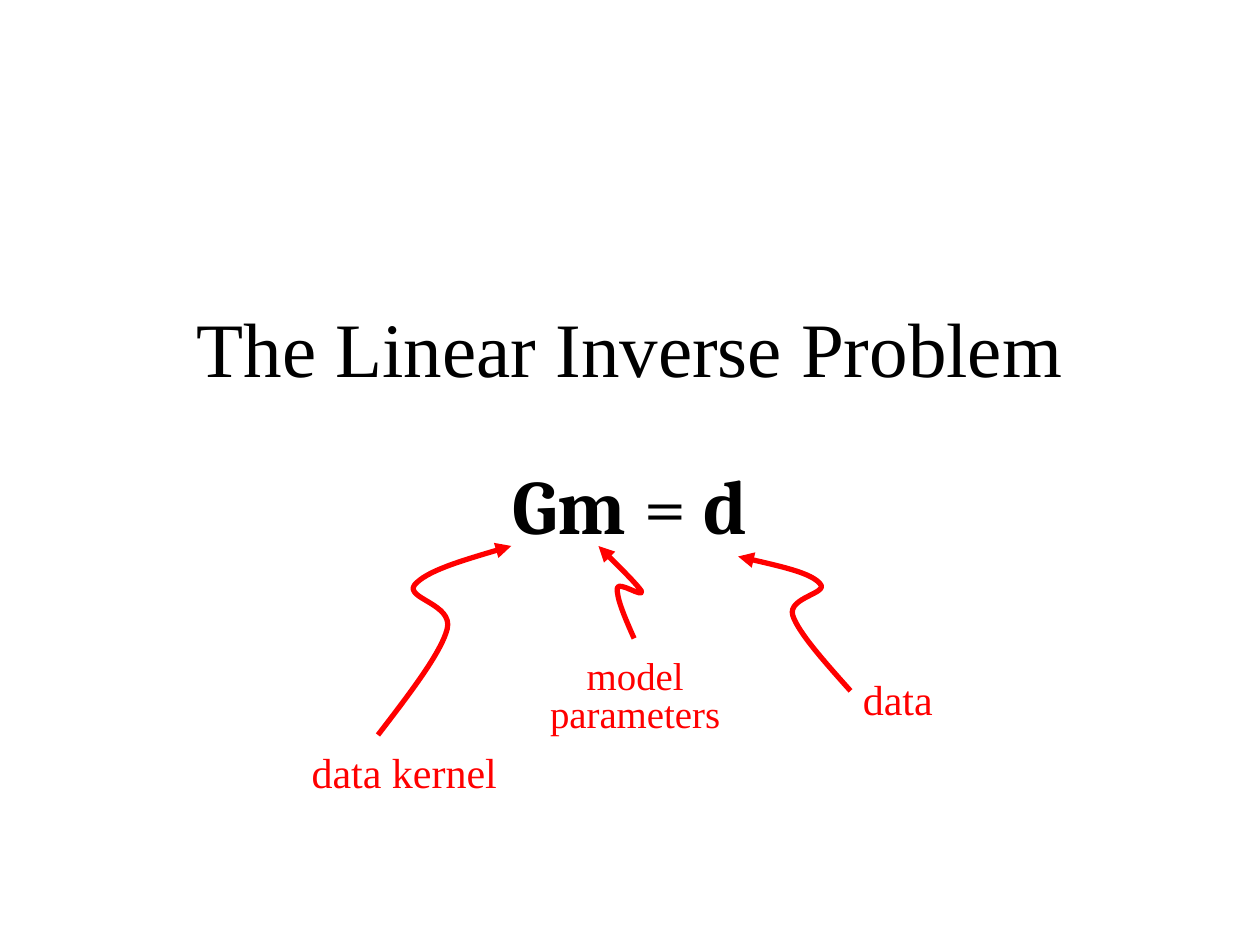
from lxml import etree
from pptx import Presentation
from pptx import util as u
from pptx.dml.color import RGBColor
from pptx.enum import text
from pptx.oxml import ns

BLACK, RED = "000000", "FF0000"
SERIF, MATH = "Times New Roman", "Cambria"
COLUMNS, ROWS = 120, 90
LABEL_SIZE = (21, 9)


def color(code):
    return RGBColor.from_string(code)


class EquationSlide:
    """The slide and its style; all lengths are columns and rows of the grid."""

    def __init__(self, deck):
        self.cell_width = deck.slide_width / COLUMNS
        self.cell_height = deck.slide_height / ROWS
        self.page = deck.slides.add_slide(deck.slide_layouts[6])

    def place(self, column, row):
        return round(column * self.cell_width), round(row * self.cell_height)

    def add_text(self, corner, extent, runs, size, ink=BLACK,
                 anchor=text.MSO_ANCHOR.MIDDLE, spacing=None):
        """Add a centred paragraph; runs are (wording, font, bold)."""
        box = self.page.shapes.add_textbox(*self.place(*corner), *self.place(*extent))
        frame = box.text_frame
        frame.word_wrap = True
        frame.vertical_anchor = anchor
        para = frame.paragraphs[0]
        para.alignment = text.PP_ALIGN.CENTER
        if spacing:
            para.line_spacing = spacing
        for wording, font, bold in runs:
            span = para.add_run()
            span.text = wording
            span.font.name = font
            span.font.size = u.Pt(size)
            span.font.bold = bold
            span.font.color.rgb = color(ink)

    def add_label(self, corner, wording, size=24, spacing=None):
        self.add_text(corner, LABEL_SIZE, [(wording, SERIF, False)], size, RED,
                      spacing=spacing)

    def add_curved_arrow(self, points):
        """Draw cubic curves through a start and triples of points, head at the start."""
        start, *rest = [self.place(*point) for point in points]
        builder = self.page.shapes.build_freeform(*start)
        builder.add_line_segments(rest, close=False)
        arrow = builder.convert_to_shape()
        arrow.shadow.inherit = False
        arrow.fill.background()
        arrow.line.color.rgb = color(RED)
        arrow.line.width = u.Pt(3)
        outline = arrow.line._get_or_add_ln()
        etree.SubElement(outline, ns.qn("a:headEnd"), type="triangle")

        path = arrow._element.find(".//" + ns.qn("a:path"))
        steps = path.findall(ns.qn("a:lnTo"))
        for first in range(0, len(steps), 3):
            curve = etree.SubElement(path, ns.qn("a:cubicBezTo"))
            for step in steps[first:first + 3]:
                curve.append(step[0])
                path.remove(step)


def main():
    deck = Presentation()
    deck.slide_width, deck.slide_height = u.Inches(10), u.Inches(7.5)
    slide = EquationSlide(deck)

    slide.add_text((6, 25.5), (108, 15),
                   [("The Linear Inverse Problem", SERIF, False)], 44)
    slide.add_text((6, 43), (108, 10),
                   [("Gm", MATH, True), (" = ", MATH, False), ("d", MATH, True)],
                   44, anchor=text.MSO_ANCHOR.TOP)

    data_arrow = [(70.3, 53),
                  (73.8, 53.8), (77.3, 54.6), (78.1, 55.6),
                  (79, 56.5), (75, 56.9), (75.5, 58.6),
                  (76, 60.2), (78.5, 63), (81, 65.8)]
    model_arrow = [(57, 52),
                   (58.9, 53.9), (60.7, 55.7), (61.1, 56.3),
                   (61.3, 57), (58.9, 55.3), (58.8, 56),
                   (58.7, 56.9), (59.5, 58.8), (60.4, 60.8)]
    kernel_arrow = [(48.7, 52),
                    (44.6, 53.2), (40.6, 54.4), (39.5, 55.7),
                    (38.5, 57), (43.2, 57.5), (42.6, 59.9),
                    (42, 62.2), (39, 66.1), (36, 70)]

    slide.add_curved_arrow(data_arrow)
    slide.add_label((75, 62), "data")
    slide.add_label((50, 62), "model parameters", size=22.2, spacing=0.8)
    slide.add_curved_arrow(model_arrow)
    slide.add_curved_arrow(kernel_arrow)
    slide.add_label((28, 69), "data kernel")

    deck.save("out.pptx")


if __name__ == "__main__":
    main()
